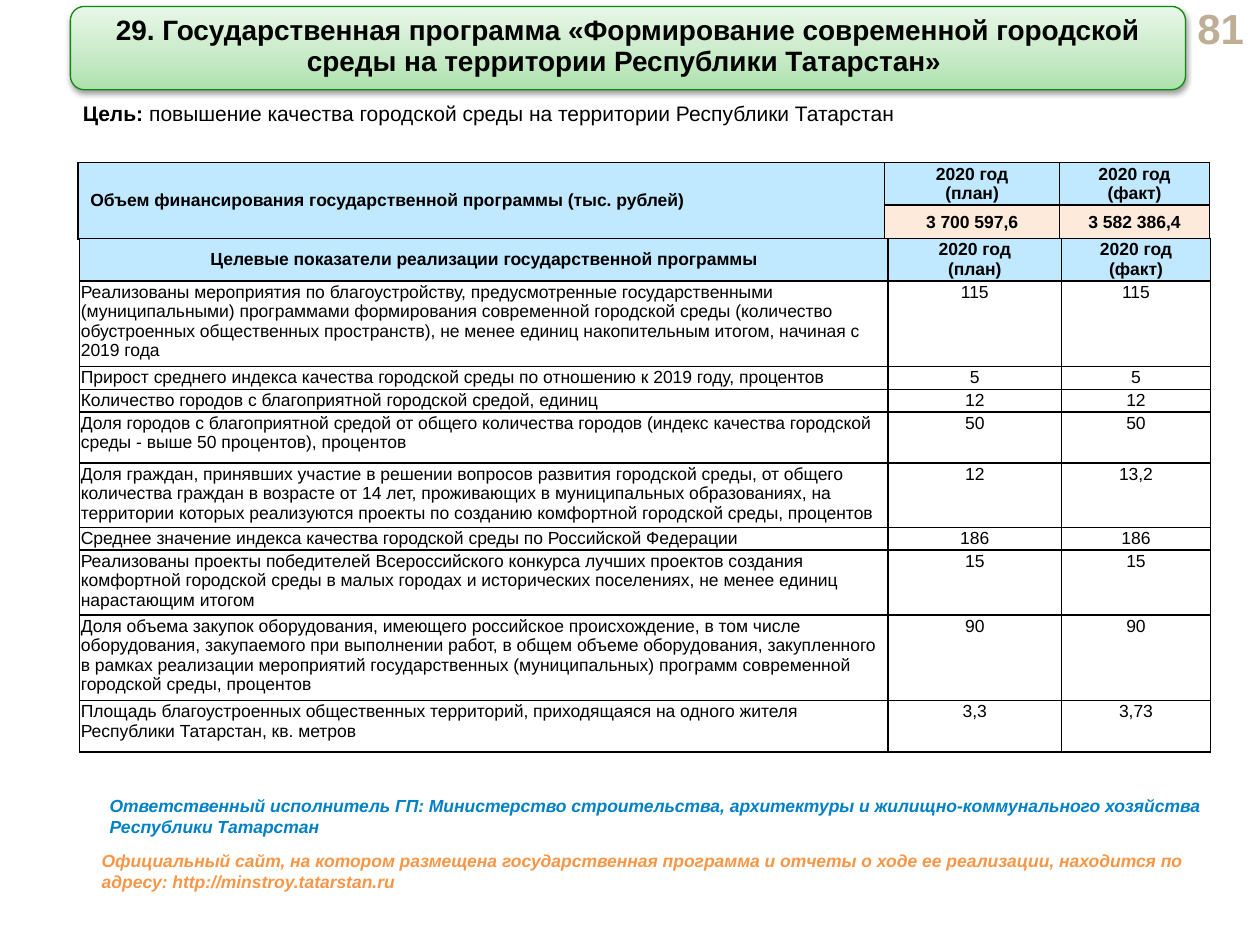
from lxml import etree
from pptx import Presentation
from pptx.dml.color import RGBColor
from pptx.enum.shapes import MSO_SHAPE as Preset
from pptx.enum.text import MSO_ANCHOR as Anchor, PP_ALIGN as Align
from pptx.oxml import parse_xml
from pptx.oxml.ns import nsdecls, qn
from pptx.util import Cm, Pt

FONT = "Arial"
COLORS = {
    "text": "000000",
    "number": "BFAE96",
    "outline": "108812",
    "gradient_low": "ABE1AB",
    "gradient_mid": "C5E9C5",
    "gradient_high": "E8F7E8",
    "header": "C0E9FF",
    "amount": "FDEADA",
    "executor": "0081C5",
    "site": "F79646",
}
INDICATORS = [
    ("Реализованы мероприятия по благоустройству, предусмотренные государственными "
     "(муниципальными) программами формирования современной городской среды (количество "
     "обустроенных общественных пространств), не менее единиц накопительным итогом, "
     "начиная с 2019 года", "115", "115", 1.71),
    ("Прирост среднего индекса качества городской среды по отношению к 2019 году, "
     "процентов", "5", "5", 0.46),
    ("Количество городов с благоприятной городской средой, единиц", "12", "12", 0.45),
    ("Доля городов с благоприятной средой от общего количества городов (индекс качества "
     "городской среды - выше 50 процентов), процентов", "50", "50", 1.03),
    ("Доля граждан, принявших участие в решении вопросов развития городской среды, от "
     "общего количества граждан в возрасте от 14 лет, проживающих в муниципальных "
     "образованиях, на территории которых реализуются проекты по созданию комфортной "
     "городской среды, процентов", "12", "13,2", 1.3),
    ("Среднее значение индекса качества городской среды по Российской Федерации",
     "186", "186", 0.45),
    ("Реализованы проекты победителей Всероссийского конкурса лучших проектов создания "
     "комфортной городской среды в малых городах и исторических поселениях, не менее "
     "единиц нарастающим итогом", "15", "15", 1.3),
    ("Доля объема закупок оборудования, имеющего российское происхождение, в том числе "
     "оборудования, закупаемого при выполнении работ, в общем объеме оборудования, "
     "закупленного в рамках реализации мероприятий государственных (муниципальных) "
     "программ современной городской среды, процентов", "90", "90", 1.71),
    ("Площадь благоустроенных общественных территорий, приходящаяся на одного жителя "
     "Республики Татарстан, кв. метров", "3,3", "3,73", 1.04),
]


def rgb(name):
    return RGBColor.from_string(COLORS[name])


def add_run(paragraph, text, size=10, color="text", bold=False, italic=False):
    run = paragraph.add_run()
    run.text = text
    font = run.font
    font.name, font.size, font.bold, font.italic = FONT, Pt(size), bold, italic
    font.color.rgb = rgb(color)


def add_text(slide, box, runs, align=Align.LEFT, spacing=None, anchor=Anchor.TOP):
    frame = slide.shapes.add_textbox(*map(Cm, box)).text_frame
    frame.word_wrap = True
    frame.vertical_anchor = anchor
    paragraph = frame.paragraphs[0]
    paragraph.alignment = align
    paragraph.line_spacing = spacing
    for text, style in runs:
        add_run(paragraph, text, **style)


def add_banner(slide, box, text):
    banner = slide.shapes.add_shape(Preset.ROUNDED_RECTANGLE, *map(Cm, box))
    banner.fill.gradient()
    banner.fill.gradient_angle = 90
    stops = banner._element.spPr.find(qn("a:gradFill")).find(qn("a:gsLst"))
    for stop in list(stops):
        stops.remove(stop)
    for position, name in ((0, "gradient_low"), (35, "gradient_mid"), (100, "gradient_high")):
        stop = etree.SubElement(stops, qn("a:gs"), pos=str(position * 1000))
        etree.SubElement(stop, qn("a:srgbClr"), val=COLORS[name])
    banner.line.color.rgb = rgb("outline")
    banner.line.width = Pt(0.75)
    banner.shadow.inherit = False
    banner._element.spPr.find(qn("a:effectLst")).append(parse_xml(
        f'<a:outerShdw {nsdecls("a")} blurRad="{Pt(3.1)}" dist="{Pt(1.6)}" dir="5400000" '
        'rotWithShape="0"><a:srgbClr val="000000"><a:alpha val="38000"/></a:srgbClr>'
        '</a:outerShdw>'))
    frame = banner.text_frame
    frame.word_wrap = True
    frame.vertical_anchor = Anchor.TOP
    title = frame.paragraphs[0]
    title.alignment = Align.CENTER
    title.line_spacing = 0.9
    add_run(title, text, size=16, bold=True)


def add_grid(slide, left, top, widths, heights):
    grid = slide.shapes.add_table(len(heights), len(widths), Cm(left), Cm(top),
                                  Cm(sum(widths)), Cm(sum(heights))).table
    grid.first_row = grid.horz_banding = False
    for column, width in zip(grid.columns, widths):
        column.width = Cm(width)
    for row, height in zip(grid.rows, heights):
        row.height = Cm(height)
    return grid


def border_cell(cell):
    properties = cell._tc.get_or_add_tcPr()
    for side in ("lnL", "lnR", "lnT", "lnB"):
        properties.append(parse_xml(
            f'<a:{side} {nsdecls("a")} w="{Pt(1)}"><a:solidFill>'
            f'<a:srgbClr val="{COLORS["text"]}"/></a:solidFill></a:{side}>'))


def fill_cell(cell, paragraphs, margins, fill=None, align=Align.CENTER,
              anchor=Anchor.MIDDLE, bold=True):
    border_cell(cell)
    if fill:
        cell.fill.solid()
        cell.fill.fore_color.rgb = rgb(fill)
    else:
        cell.fill.background()
    cell.vertical_anchor = anchor
    (cell.margin_left, cell.margin_top,
     cell.margin_right, cell.margin_bottom) = map(Cm, margins)
    for index, text in enumerate(paragraphs):
        frame = cell.text_frame
        paragraph = frame.add_paragraph() if index else frame.paragraphs[0]
        paragraph.alignment = align
        for number, line in enumerate(text.split("\n")):
            if number:
                paragraph.add_line_break()
            add_run(paragraph, line, bold=bold)


def add_funding(slide):
    funding = add_grid(slide, 1.57, 3.28, (16.26, 3.53, 3.02), (0.85, 0.67))
    funding.cell(0, 0).merge(funding.cell(1, 0))
    fill_cell(funding.cell(0, 0), ["Объем финансирования государственной программы (тыс. рублей)"],
              (0.25, 0.13, 0.25, 0.13), "header", Align.LEFT)
    border_cell(funding.cell(1, 0))
    amounts = (("(план)", "3 700 597,6"), ("(факт)", "3 582 386,4"))
    for column, (kind, amount) in enumerate(amounts, 1):
        fill_cell(funding.cell(0, column), ["2020 год", kind], (0.15, 0, 0.15, 0), "header")
        fill_cell(funding.cell(1, column), [amount], (0.03, 0.03, 0.03, 0), "amount")


def add_indicators(slide):
    heights = [0.85] + [height for *_, height in INDICATORS]
    indicators = add_grid(slide, 1.6, 4.81, (16.3, 3.5, 3), heights)
    headings = ("Целевые показатели реализации государственной программы",
                "2020 год\n(план)", "2020 год\n(факт)")
    for column, heading in enumerate(headings):
        fill_cell(indicators.cell(0, column), [heading], (0, 0, 0, 0), "header")
    for row, (*values, _) in enumerate(INDICATORS, 1):
        for column, value in enumerate(values):
            fill_cell(indicators.cell(row, column), [value], (0.03, 0.03, 0.03, 0),
                      align=Align.CENTER if column else Align.LEFT,
                      anchor=Anchor.TOP, bold=False)


def main():
    deck = Presentation()
    deck.slide_width, deck.slide_height = Cm(25.4), Cm(19.05)
    slide = deck.slides.add_slide(deck.slide_layouts[6])
    add_text(slide, (23.7, 0.13, 1.63, 0.86),
             [("81", {"size": 24, "color": "number", "bold": True})],
             align=Align.RIGHT, anchor=Anchor.MIDDLE)
    add_text(slide, (1.42, 1.96, 23.67, 0.9),
             [("Цель: ", {"size": 12, "bold": True}),
              ("повышение качества городской среды на территории Республики Татарстан",
               {"size": 12})], spacing=0.9)
    add_banner(slide, (1.42, 0.13, 22.48, 1.68),
               "29. Государственная программа «Формирование современной городской среды "
               "на территории Республики Татарстан» ")
    add_funding(slide)
    add_indicators(slide)
    notes = (
        ((1.96, 15.9, 22.58, 1.12), "executor",
         "Ответственный исполнитель ГП: Министерство строительства, архитектуры и "
         "жилищно-коммунального хозяйства Республики Татарстан"),
        ((1.8, 17.02, 22.43, 1.12), "site",
         "Официальный сайт, на котором размещена государственная программа и отчеты о ходе "
         "ее реализации, находится по адресу: http://minstroy.tatarstan.ru"),
    )
    for box, color, text in notes:
        add_text(slide, box, [(text, {"color": color, "bold": True, "italic": True})])
    deck.save("out.pptx")


if __name__ == "__main__":
    main()
